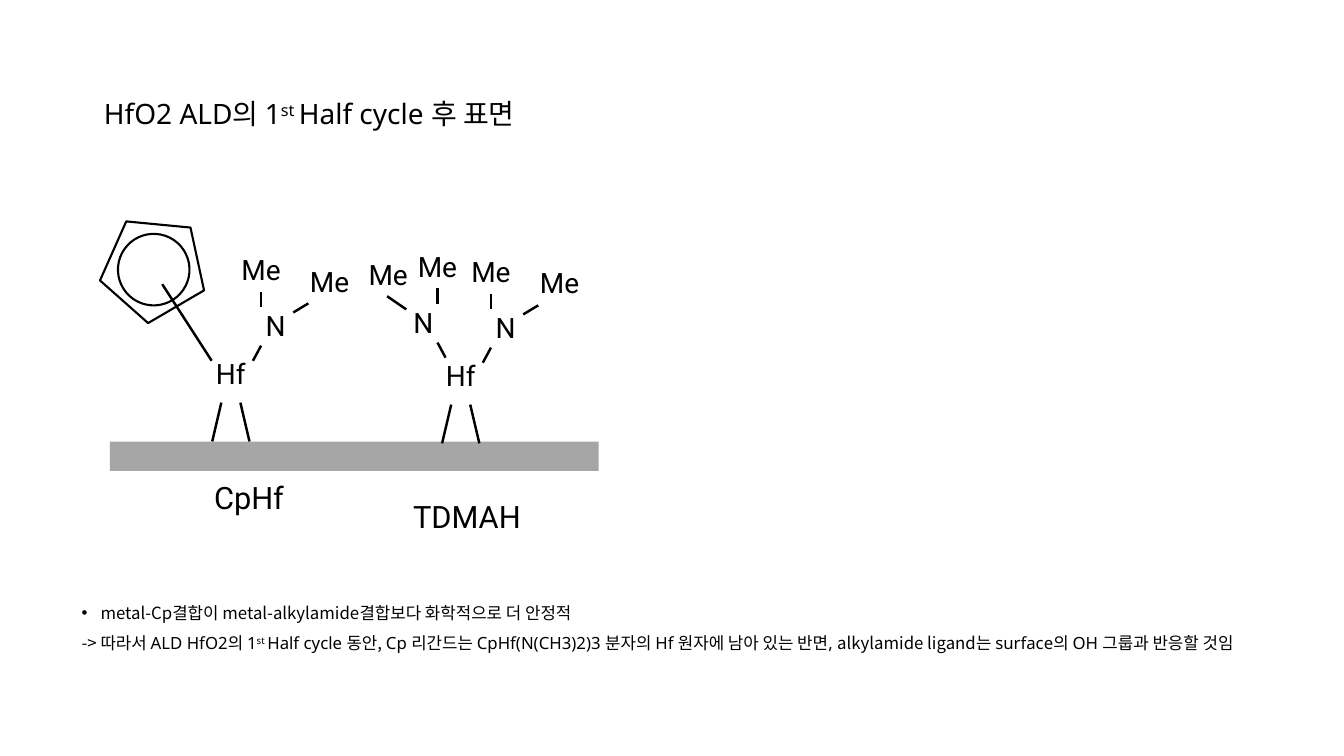
from lxml import etree
from pptx import Presentation
from pptx.dml.color import RGBColor
from pptx.enum.shapes import MSO_CONNECTOR, MSO_SHAPE
from pptx.enum.text import MSO_ANCHOR, MSO_AUTO_SIZE, PP_ALIGN
from pptx.oxml.ns import qn
from pptx.util import Pt

LINE = MSO_CONNECTOR.STRAIGHT
RECT, RING, DISC = MSO_SHAPE.RECTANGLE, MSO_SHAPE.REGULAR_PENTAGON, MSO_SHAPE.OVAL
TOP, GROW = MSO_ANCHOR.TOP, MSO_AUTO_SIZE.SHAPE_TO_FIT_TEXT
LEFT, MID = PP_ALIGN.LEFT, PP_ALIGN.CENTER

COLORS = {"ink": "000000", "base": "A6A6A6"}
SANS, KOREAN, LATIN = "Noto Sans", "Noto Sans CJK KR", "Roboto"
FRAME = {"word_wrap": True, "auto_size": GROW, "vertical_anchor": TOP}

RIGHT_ARM = {
    "atoms": [("N", 32, -34.5), ("Me", 21.6, -74.2), ("Me", 70.6, -66.2)],
    "bonds": [(21.6, -20.2, 15.8, -9.4), (55.4, -50.4, 44.6, -43.9),
              (21.6, -58.3, 21.6, -47.5)],
}
LEFT_ARM = {
    "atoms": [("N", -26.6, -38.2), ("Me", -16.6, -77.8), ("Me", -51.8, -72)],
    "bonds": [(-16.6, -23.8, -10.8, -13), (-52.6, -56.9, -38.9, -47.5),
              (-16.6, -62.6, -16.6, -51.1)],
}
HEAD = [("HfO2 ALD의 1", SANS, 0), ("st ", SANS, 30), ("Half cycle 후 표면", SANS, 0)]
NOTES = [
    [("metal-Cp결합이 metal-alkylamide결합보다 화학적으로 더 안정적", KOREAN, 0)],
    [("-> 따라서 ", KOREAN, 0), ("ALD HfO2의 1", SANS, 0), ("st ", SANS, 30),
     ("Half cycle 동안", SANS, 0), (", ", KOREAN, 0),
     ("Cp 리간드는 CpHf(N(CH3)2)3 분자의 Hf 원자에 남아 있는 반면, ", SANS, 0),
     ("alkylamide ligand는 ", KOREAN, 0),
     ("surface의 OH 그룹과 반응할 것임", SANS, 0)],
]


def rgb(name):
    return RGBColor.from_string(COLORS[name])


def apply(target, values):
    for name, value in values.items():
        setattr(target, name, value)


def place(shape, box):
    apply(shape, dict(zip(("left", "top", "width", "height"), map(Pt, box))))


def write(para, runs, size):
    for text, face, lift in runs:
        run = para.add_run()
        run.text = text
        apply(run.font, {"name": face, "size": Pt(size)})
        run.font.color.rgb = rgb("ink")
        props = run._r.get_or_add_rPr()
        etree.SubElement(props, qn("a:ea"), typeface=KOREAN)
        if lift:
            props.set("baseline", str(lift * 1000))


def label(shapes, text, x, y, size=20, width=78, height=31.7):
    box = shapes.add_textbox(*map(Pt, (x - width / 2, y - height / 2, width, height)))
    apply(box.text_frame, FRAME)
    para = box.text_frame.paragraphs[0]
    para.alignment = MID
    write(para, [(text, LATIN, 0)], size)


def bond(shapes, x, y, ends):
    x1, y1, x2, y2 = ends
    line = shapes.add_connector(LINE, *map(Pt, (x + x1, y + y1, x + x2, y + y2)))
    line.line.color.rgb = rgb("ink")
    line.line.width = Pt(1.75)
    etree.SubElement(line._element.spPr, qn("a:effectLst"))


def outline(shapes, kind, x, y, width, height, turn):
    shape = shapes.add_shape(kind, *map(Pt, (x - width / 2, y - height / 2, width, height)))
    shape.rotation = turn
    shape.shadow.inherit = False
    shape.fill.background()
    shape.line.color.rgb = rgb("ink")
    shape.line.width = Pt(1.5)


def complex_at(shapes, x, y, arms):
    label(shapes, "Hf", x, y)
    for side in (-1, 1):
        bond(shapes, x, y, (side * 13.3, 48.2, side * 6.8, 20.5))
    for arm in arms:
        for text, dx, dy in arm["atoms"]:
            label(shapes, text, x + dx, y + dy)
        for ends in arm["bonds"]:
            bond(shapes, x, y, ends)


def cp_ring(shapes, x, y):
    bond(shapes, x, y, (-49, -64.1, -13.7, -9.4))
    outline(shapes, RING, x - 56.9, y - 78.5, 74.9, 70.6, 329.7)
    outline(shapes, DISC, x - 55.1, y - 74.5, 51.1, 51.1, 12.2)


def surface(slide, box):
    x, y, width, height = box
    shapes = slide.shapes.add_group_shape().shapes
    base = shapes.add_shape(RECT, *map(Pt, (x, y + height - 20.9, width, 20.9)))
    base.shadow.inherit = False
    base.fill.solid()
    base.fill.fore_color.rgb = rgb("base")
    base.line.fill.background()
    metal = x + 86.4, y + 113.7
    cp_ring(shapes, *metal)
    complex_at(shapes, *metal, [RIGHT_ARM])
    complex_at(shapes, x + 250.6, y + 115.1, [LEFT_ARM, RIGHT_ARM])
    for text, dx, dy in (("CpHf", 99.4, 201.9), ("TDMAH", 255, 215.6)):
        label(slide.shapes, text, x + dx, y + dy, 22, 134, 33.8)


def heading(slide, box):
    title = slide.shapes.title
    place(title, box)
    apply(title.text_frame, FRAME)
    para = title.text_frame.paragraphs[0]
    para.alignment = LEFT
    write(para, HEAD, 20)


def notes(slide, box):
    body = slide.placeholders[1]
    place(body, box)
    frame = body.text_frame
    apply(frame, FRAME)
    for i, runs in enumerate(NOTES):
        para = frame.add_paragraph() if i else frame.paragraphs[0]
        props = para._p.get_or_add_pPr()
        indent = 0 if i else Pt(13.5)
        props.set("marL", str(indent))
        props.set("indent", str(-indent))
        if i:
            etree.SubElement(props, qn("a:buNone"))
        else:
            etree.SubElement(props, qn("a:buFont"), typeface="Arial")
            etree.SubElement(props, qn("a:buChar"), char="•")
        apply(para, {"alignment": LEFT, "line_spacing": 1.5, "space_before": Pt(0)})
        write(para, runs, 12)


def main():
    deck = Presentation()
    apply(deck, {"slide_width": Pt(960), "slide_height": Pt(540)})
    slide = deck.slides.add_slide(deck.slide_layouts[1])
    surface(slide, (78.5, 153.4, 349.2, 182.9))
    notes(slide, (51.1, 419.8, 882.7, 48.2))
    heading(slide, (67, 65.5, 480.2, 31.7))
    deck.save("out.pptx")


if __name__ == "__main__":
    main()
